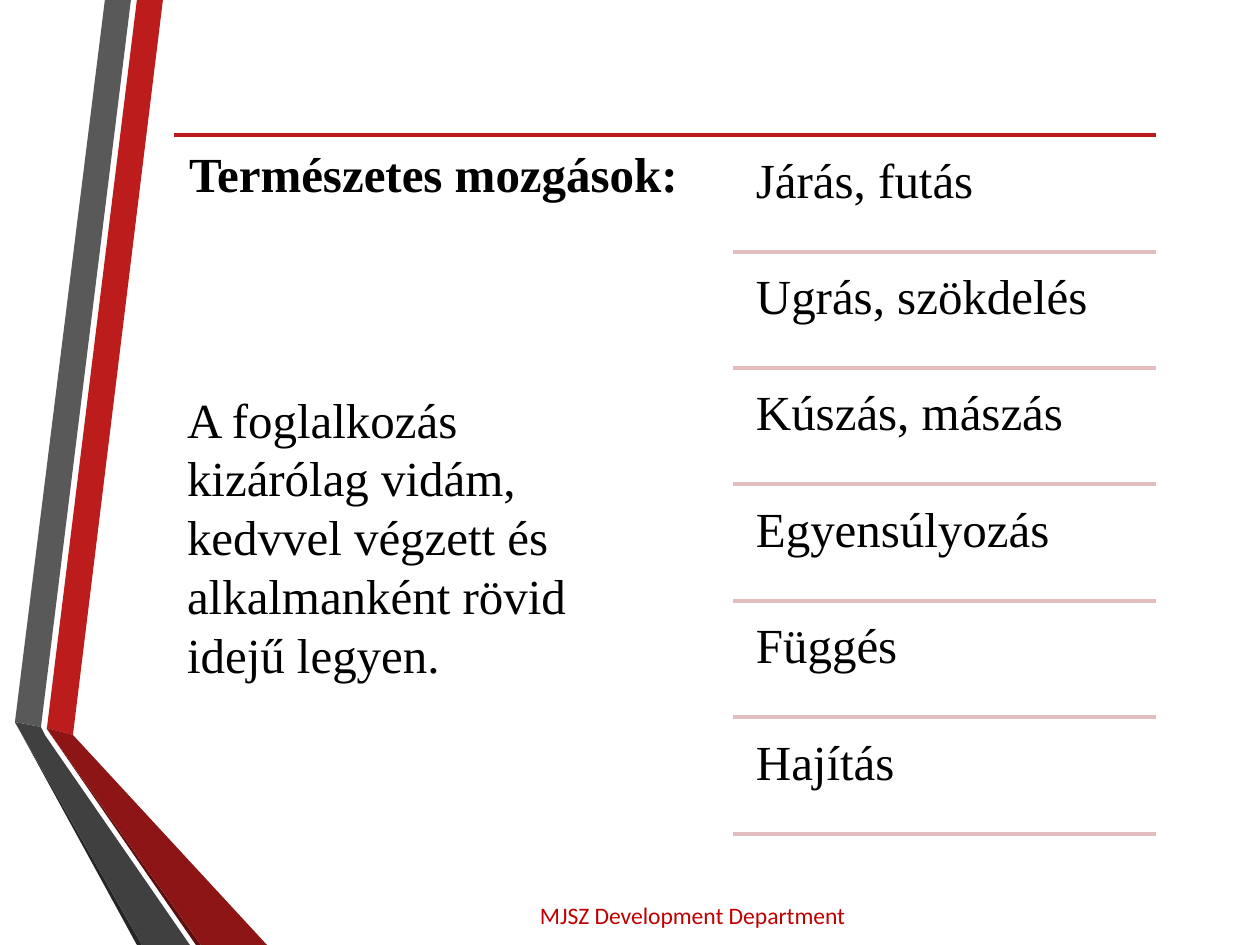
"""Build a slide on natural movements with ruled list rows and a ribbon edge."""
import pptx
import pptx.dml.color
import pptx.enum.shapes
import pptx.enum.text
import pptx.oxml.ns
import pptx.util
from lxml import etree

PX = 914400 / 126
COLORS = {
    "red": "BC1C1C", "gray": "595959", "near_black": "262626",
    "maroon": "5E0E0E", "dark_red": "8D1515", "dark_gray": "404040",
    "footer": "C00000", "text": "000000", "row_rule": "E1BDBD",
}


def add_text(box, words, size, font, color, inset_x, inset_y, wrap=True):
    left, top, width, height = [round(n * PX) for n in box]
    frame = slide.shapes.add_textbox(left, top, width, height).text_frame
    frame.word_wrap = wrap
    frame.margin_left = frame.margin_right = round(inset_x * PX)
    frame.margin_top = frame.margin_bottom = round(inset_y * PX)
    paragraph = frame.paragraphs[0]
    paragraph.text = words
    paragraph.font.size = pptx.util.Pt(size)
    paragraph.font.name = font
    paragraph.font.color.rgb = pptx.dml.color.RGBColor.from_string(COLORS[color])
    return paragraph


def add_rule(left, right, y, color):
    rule = slide.shapes.add_connector(
        pptx.enum.shapes.MSO_CONNECTOR.STRAIGHT,
        round(left * PX), round(y * PX), round(right * PX), round(y * PX))
    rule.line.color.rgb = pptx.dml.color.RGBColor.from_string(COLORS[color])
    rule.line.width = pptx.util.Pt(2)
    etree.SubElement(rule._element.spPr, pptx.oxml.ns.qn("a:effectLst"))


deck = pptx.Presentation()
deck.slide_width = round(1260 * PX)
deck.slide_height = round(945 * PX)
slide = deck.slides.add_slide(deck.slide_layouts[6])

ribbons = [
    ("red", [(47, 728), (73, 735), (163, 0), (137, 0)]),
    ("gray", [(131, 0), (105, 0), (15, 722), (41, 727)]),
    ("near_black", [(15, 722), (137, 945), (142, 945)]),
    ("maroon", [(47, 729), (196, 945), (201, 945)]),
    ("dark_red", [(47, 729), (201, 945), (267, 945), (73, 735), (47, 728)]),
    ("dark_gray", [(190, 945), (45, 735), (41, 727), (15, 722), (142, 945)]),
]
for color, points in ribbons:
    outline = slide.shapes.build_freeform(*points[0], scale=PX)
    outline.add_line_segments(points[1:], close=True)
    ribbon = outline.convert_to_shape()
    ribbon.shadow.inherit = False
    ribbon.fill.solid()
    ribbon.fill.fore_color.rgb = pptx.dml.color.RGBColor.from_string(COLORS[color])
    ribbon.line.fill.background()

add_text((535, 895, 350, 42), "MJSZ Development Department", 13.5, "Calibri",
         "footer", 5, 6, wrap=False)
add_text((174, 383, 411, 369),
         "A foglalkozás kizárólag vidám, kedvvel végzett és alkalmanként rövid "
         "idejű legyen.", 28, "Times New Roman", "text", 13, 6)

add_rule(174, 1156, 135, "red")
heading = add_text((174, 135, 559, 704), "Természetes mozgások:", 28,
                   "Times New Roman", "text", 15, 15)
heading.font.bold = True
heading.line_spacing = 0.9

movements = ["Járás, futás", "Ugrás, szökdelés", "Kúszás, mászás",
             "Egyensúlyozás", "Függés", "Hajítás"]
for row, movement in enumerate(movements):
    rule_y = 252 + 582 * row // 5
    item = add_text((741, rule_y - 111, 415, 111), movement, 28,
                    "Times New Roman", "text", 15, 15)
    item.line_spacing = 0.9
    add_rule(733, 1156, rule_y, "row_rule")

deck.save("out.pptx")
